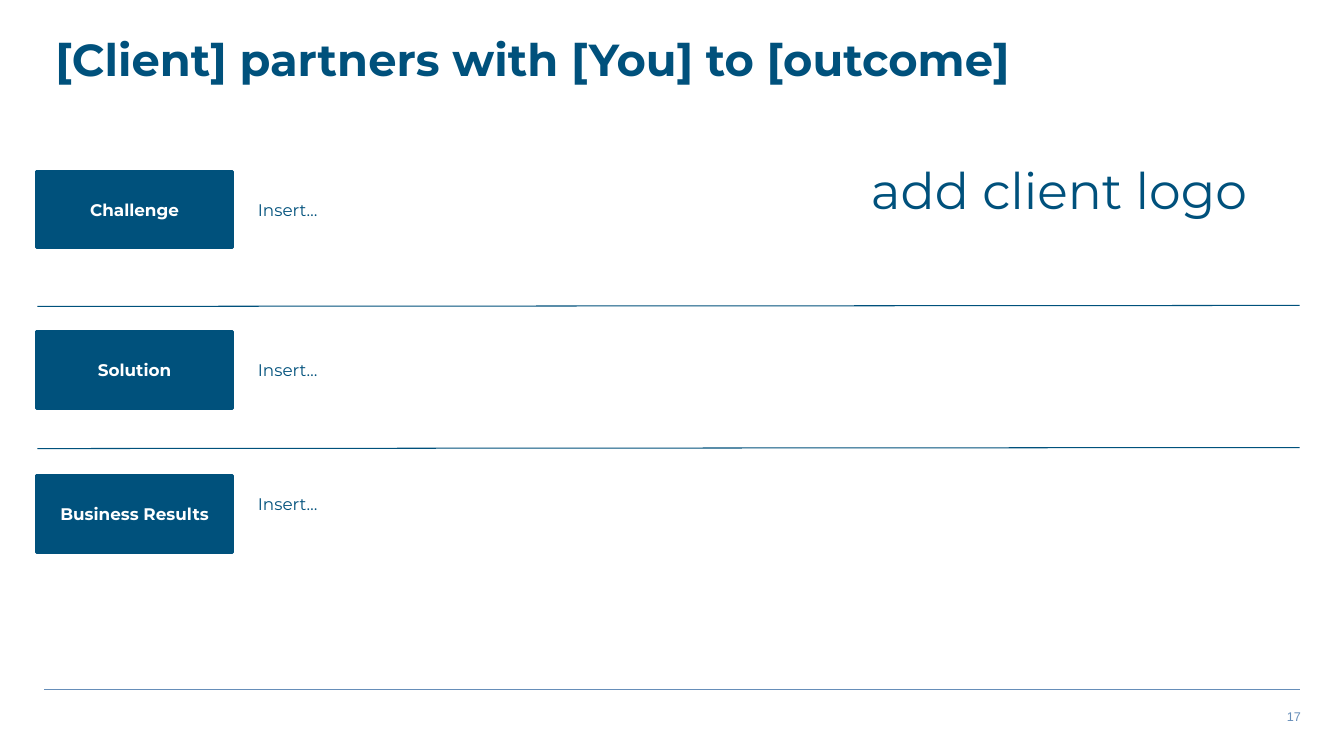
"""Build a client case study slide: challenge, solution and business results."""
from pptx import Presentation
from pptx.dml.color import RGBColor
from pptx.enum.shapes import MSO_CONNECTOR, MSO_SHAPE
from pptx.enum.text import MSO_ANCHOR, PP_ALIGN
from pptx.util import Inches, Pt
from lxml.etree import SubElement
from pptx.oxml.ns import qn

NAVY, STEEL, WHITE = "00517C", "668EB9", "FFFFFF"


def paint(color_format, value):
    color_format.rgb = RGBColor.from_string(value)


def write(shape, text, size, color, bold=False, font="Montserrat", align=PP_ALIGN.LEFT,
          anchor=MSO_ANCHOR.TOP, inset=0.1):
    frame = shape.text_frame
    frame.word_wrap = True
    frame.vertical_anchor = anchor
    frame.margin_left = frame.margin_right = Inches(0.1)
    frame.margin_top = frame.margin_bottom = Inches(inset)
    paragraph = frame.paragraphs[0]
    paragraph.alignment = align
    run = paragraph.add_run()
    run.text = text
    run.font.size = Pt(size)
    run.font.name = font
    run.font.bold = bold
    paint(run.font.color, color)
    return paragraph


prs = Presentation()
prs.slide_width, prs.slide_height = Inches(13.33), Inches(7.5)
slide = prs.slides.add_slide(prs.slide_layouts[6])
shapes = slide.shapes

for left, start, end, color, width in [
    (0.44, 6.84, 6.84, STEEL, 1),
    (0.37, 3.04, 3.03, NAVY, 0.75),
    (0.37, 4.45, 4.44, NAVY, 0.75),
]:
    divider = shapes.add_connector(MSO_CONNECTOR.STRAIGHT, Inches(left), Inches(start),
                                   Inches(12.89), Inches(end))
    paint(divider.line.color, color)
    divider.line.width = Pt(width)
    SubElement(divider._element.spPr, qn("a:effectLst"))

page_number = shapes.add_textbox(Inches(7.67), Inches(6.98), Inches(5.33), Inches(0.25))
write(page_number, "17", 9, STEEL, font="Arial", align=PP_ALIGN.RIGHT, inset=0.05)

headline = shapes.add_textbox(Inches(0.45), Inches(0.33), Inches(10.25), Inches(0.76))
headline_line = write(headline, "[Client] partners with [You] to [outcome]", 32, NAVY,
                      bold=True, inset=0.05)
headline_line.line_spacing = 0.9

for topic, top, detail_width, bottom_inset in [
    ("Challenge", 1.7, 5.94, 0.1),
    ("Solution", 3.29, 10.43, 0.1),
    ("Business Results", 4.72, 10.43, 0.3),
]:
    detail = shapes.add_shape(MSO_SHAPE.RECTANGLE, Inches(2.46), Inches(top),
                              Inches(detail_width), Inches(0.76))
    topic_box = shapes.add_shape(MSO_SHAPE.RECTANGLE, Inches(0.36), Inches(top),
                                 Inches(1.95), Inches(0.76))
    for box, fill in [(detail, WHITE), (topic_box, NAVY)]:
        box.shadow.inherit = False
        box.fill.solid()
        paint(box.fill.fore_color, fill)
    detail.line.fill.background()
    paint(topic_box.line.color, NAVY)
    topic_box.line.width = Pt(2.25)
    write(detail, "Insert…", 12, NAVY, anchor=MSO_ANCHOR.MIDDLE)
    detail.text_frame.margin_bottom = Inches(bottom_inset)
    write(topic_box, topic, 12, WHITE, bold=True, align=PP_ALIGN.CENTER,
          anchor=MSO_ANCHOR.MIDDLE)

client_logo = shapes.add_textbox(Inches(8.54), Inches(1.48), Inches(4.35), Inches(0.76))
write(client_logo, "add client logo", 36, NAVY)

prs.save("out.pptx")
